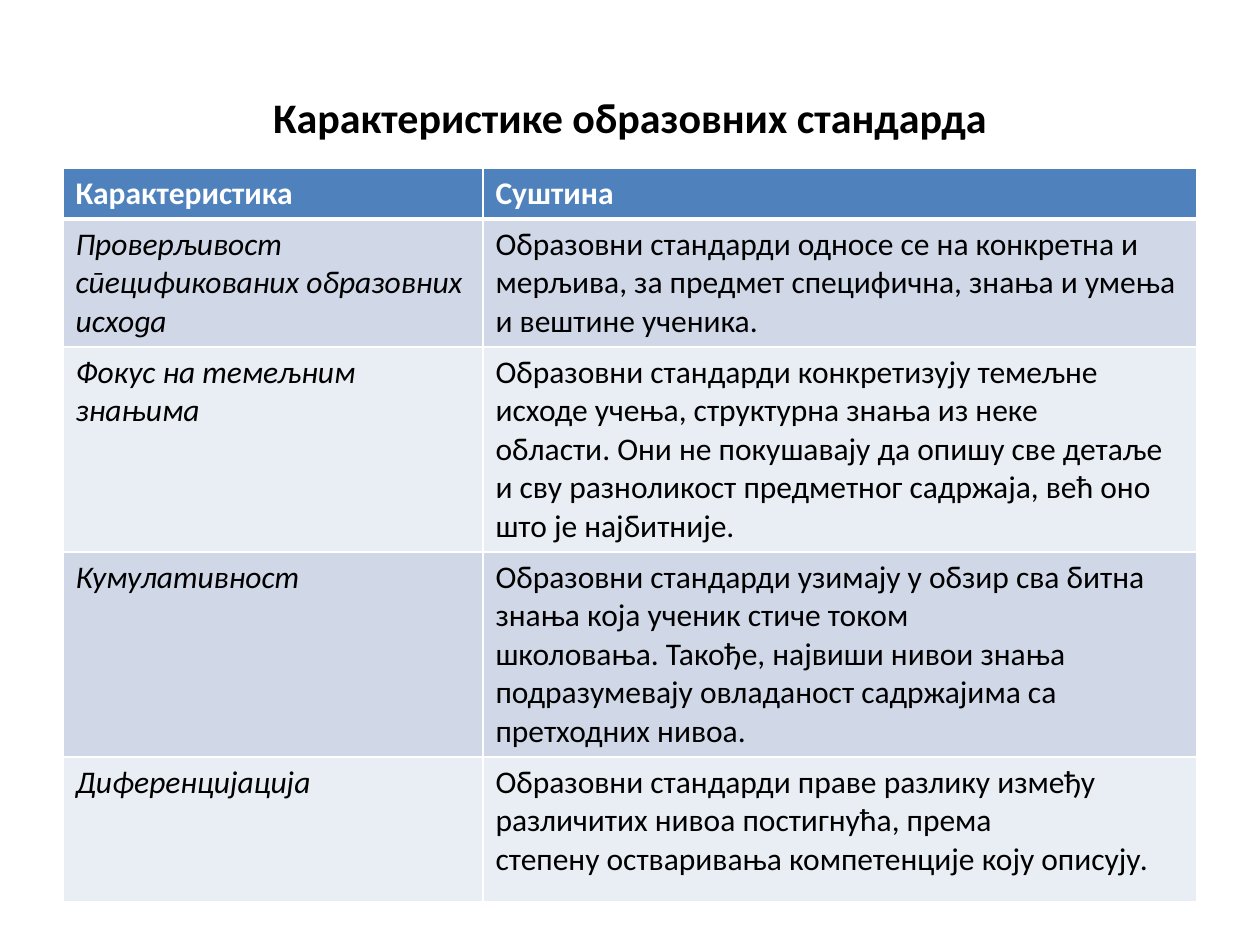
from lxml.etree import SubElement
from pptx import Presentation
from pptx.dml.color import RGBColor
from pptx.enum.lang import MSO_LANGUAGE_ID
from pptx.enum.text import MSO_ANCHOR, PP_ALIGN
from pptx.oxml.ns import qn
from pptx.util import Pt

FONT = "Calibri"
WHITE, BLACK = "FFFFFF", "000000"
HEADER_FILL = "4F81BD"
BAND_FILLS = ("D0D8E8", "E9EDF4")
COLUMN_WIDTHS = (240, 408)
ROW_HEIGHTS = (27.4, 69.1, 110.2, 110.2, 82.8)

HEADINGS = ("Карактеристика", "Суштина")
# Each characteristic with the paragraphs that explain it
CHARACTERISTICS = [
    ("Проверљивост спецификованих образовних исхода",
     ["Образовни стандарди односе се на конкретна и мерљива, за предмет "
      "специфична, знања и умења и вештине ученика."]),
    ("Фокус на темељним знањима",
     ["Образовни стандарди конкретизују темељне исходе учења, структурна "
      "знања из неке",
      "области. Они не покушавају да опишу све детаље и сву разноликост "
      "предметног садржаја, већ оно што је најбитније."]),
    ("Кумулативност",
     ["Образовни стандарди узимају у обзир сва битна знања која ученик "
      "стиче током",
      "школовања. Такође, највиши нивои знања подразумевају овладаност "
      "садржајима са",
      "претходних нивоа."]),
    ("Диференцијација",
     ["Образовни стандарди праве разлику између различитих нивоа "
      "постигнућа, према",
      "степену остваривања компетенције коју описују."]),
]


def rgb(value):
    return RGBColor.from_string(value)


def write(frame, paragraphs, size=18, color=BLACK, bold=False, italic=False,
          align=PP_ALIGN.LEFT):
    """Fill a text frame with paragraphs in one format."""
    for index, text in enumerate(paragraphs):
        para = frame.add_paragraph() if index else frame.paragraphs[0]
        para.alignment = align
        span = para.add_run()
        span.text = text
        font = span.font
        font.name, font.size = FONT, Pt(size)
        font.bold, font.italic = bold, italic
        font.color.rgb = rgb(color)
        font.language_id = MSO_LANGUAGE_ID.SERBIAN_CYRILLIC


def add_borders(cell, bottom=1, top=1):
    """Draw white cell borders; widths are in points."""
    properties = cell._tc.get_or_add_tcPr()
    for tag, width in (("lnL", 1), ("lnR", 1), ("lnT", top), ("lnB", bottom)):
        line = SubElement(properties, qn(f"a:{tag}"), w=str(Pt(width)))
        fill = SubElement(line, qn("a:solidFill"))
        SubElement(fill, qn("a:srgbClr"), val=WHITE)


def fill_cell(cell, paragraphs, fill, bottom=1, top=1, **style):
    add_borders(cell, bottom, top)
    cell.fill.solid()
    cell.fill.fore_color.rgb = rgb(fill)
    write(cell.text_frame, paragraphs, **style)


def add_title(page, text):
    box = page.shapes.title
    box.left, box.top, box.width, box.height = Pt(36), Pt(21.6), Pt(648), Pt(90)
    box.text_frame.vertical_anchor = MSO_ANCHOR.MIDDLE
    write(box.text_frame, [text], size=24, bold=True, align=PP_ALIGN.CENTER)


def add_characteristics_table(page):
    table = page.shapes.add_table(
        len(ROW_HEIGHTS), len(COLUMN_WIDTHS), Pt(36), Pt(96),
        Pt(sum(COLUMN_WIDTHS)), Pt(sum(ROW_HEIGHTS))).table
    for column, width in zip(table.columns, COLUMN_WIDTHS):
        column.width = Pt(width)
    for row, height in zip(table.rows, ROW_HEIGHTS):
        row.height = Pt(height)

    # Header row
    for index, heading in enumerate(HEADINGS):
        fill_cell(table.cell(0, index), [heading], HEADER_FILL, bottom=3,
                  color=WHITE, bold=True)

    # Banded body rows
    for row, (name, meaning) in enumerate(CHARACTERISTICS, start=1):
        fill = BAND_FILLS[(row - 1) % 2]
        top = 3 if row == 1 else 1
        fill_cell(table.cell(row, 0), [name], fill, top=top, italic=True)
        fill_cell(table.cell(row, 1), meaning, fill, top=top)


def main():
    deck = Presentation()
    deck.slide_width, deck.slide_height = Pt(720), Pt(540)
    page = deck.slides.add_slide(deck.slide_layouts[5])
    add_title(page, "Карактеристике образовних стандарда")
    add_characteristics_table(page)
    deck.save("out.pptx")


if __name__ == "__main__":
    main()
